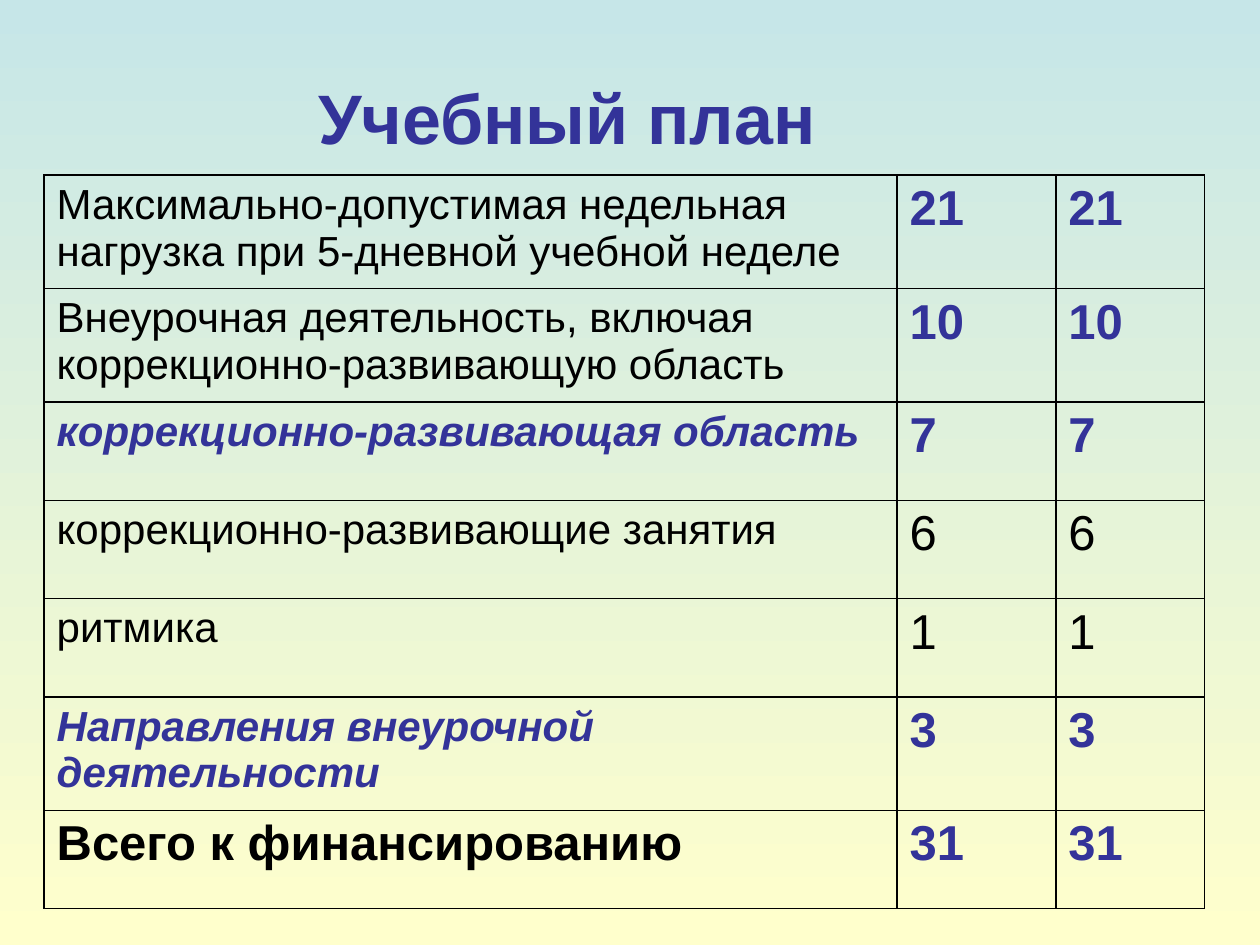
from lxml import etree
from pptx import Presentation
from pptx.dml.color import RGBColor
from pptx.enum.text import MSO_ANCHOR, PP_ALIGN
from pptx.oxml.ns import qn
from pptx.util import Inches, Pt

CENTER = PP_ALIGN.CENTER
MIDDLE = MSO_ANCHOR.MIDDLE
BLUE, BLACK = "333399", "000000"
BORDER_SIDES = ("lnL", "lnR", "lnT", "lnB")

PLAIN = {"size": Pt(24), "color": BLACK}
SECTION = {"size": Pt(24), "color": BLUE, "bold": True, "italic": True}
TOTAL = {"size": Pt(28), "color": BLACK, "bold": True}
NUMBER = {"size": Pt(28), "color": BLACK}
KEY_NUMBER = {"size": Pt(28), "color": BLUE, "bold": True}
TITLE = {"size": Pt(40), "color": BLUE, "bold": True}

PLAN_ROWS = [
    ("Максимально-допустимая недельная нагрузка при 5-дневной учебной неделе", 21, PLAIN, KEY_NUMBER),
    ("Внеурочная деятельность, включая коррекционно-развивающую область", 10, PLAIN, KEY_NUMBER),
    ("коррекционно-развивающая область", 7, SECTION, KEY_NUMBER),
    ("коррекционно-развивающие занятия", 6, PLAIN, NUMBER),
    ("ритмика", 1, PLAIN, NUMBER),
    ("Направления внеурочной деятельности", 3, SECTION, KEY_NUMBER),
    ("Всего к финансированию", 31, TOTAL, KEY_NUMBER),
]


def rgb(value):
    return RGBColor.from_string(value)


class SlideBuilder:
    font_name = "Arial"
    border_color = BLACK
    border_width = Pt(1)

    def __init__(self, slide):
        self.slide = slide

    def background(self, top_color, bottom_color):
        fill = self.slide.background.fill
        fill.gradient()
        fill.gradient_angle = 270
        for stop, color in zip(fill.gradient_stops, (top_color, bottom_color)):
            stop.color.rgb = rgb(color)

    def add_text(self, paragraph, text, text_format):
        run = paragraph.add_run()
        run.text = text
        values = {"name": self.font_name, "bold": False, "italic": False, **text_format}
        run.font.color.rgb = rgb(values.pop("color"))
        for name, value in values.items():
            setattr(run.font, name, value)

    def title(self, text, left, top, width, height):
        shape = self.slide.shapes.add_textbox(
            Inches(left), Inches(top), Inches(width), Inches(height)
        )
        frame = shape.text_frame
        frame.word_wrap = True
        frame.vertical_anchor = MIDDLE
        paragraph = frame.paragraphs[0]
        paragraph.alignment = CENTER
        self.add_text(paragraph, text, TITLE)

    def borders(self, cell):
        properties = cell._tc.get_or_add_tcPr()
        for side in BORDER_SIDES:
            line = etree.SubElement(properties, qn(f"a:{side}"), w=str(self.border_width))
            fill = etree.SubElement(line, qn("a:solidFill"))
            etree.SubElement(fill, qn("a:srgbClr"), val=self.border_color)

    def table(self, rows, left, top, column_widths, row_height):
        table = self.slide.shapes.add_table(
            len(rows), len(column_widths), Inches(left), Inches(top),
            Inches(sum(column_widths)), Inches(row_height * len(rows)),
        ).table
        table.first_row = False
        table.horz_banding = False
        for column, width in zip(table.columns, column_widths):
            column.width = Inches(width)
        for row, (label, hours, label_format, hours_format) in zip(table.rows, rows):
            row.height = Inches(row_height)
            contents = [(label, label_format)] + [(str(hours), hours_format)] * 2
            for cell, (text, text_format) in zip(row.cells, contents):
                self.borders(cell)
                cell.fill.background()
                self.add_text(cell.text_frame.paragraphs[0], text, text_format)


def main():
    presentation = Presentation()
    presentation.slide_width = Inches(10)
    presentation.slide_height = Inches(7.5)
    slide = presentation.slides.add_slide(presentation.slide_layouts[6])
    builder = SlideBuilder(slide)
    builder.background("C6E6E8", "FFFFCC")
    builder.title("Учебный план", 0, 0.3, 9, 1.25)
    builder.table(PLAN_ROWS, 0.35, 1.39, (6.77, 1.26, 1.18), 0.78)
    presentation.save("out.pptx")


if __name__ == "__main__":
    main()
